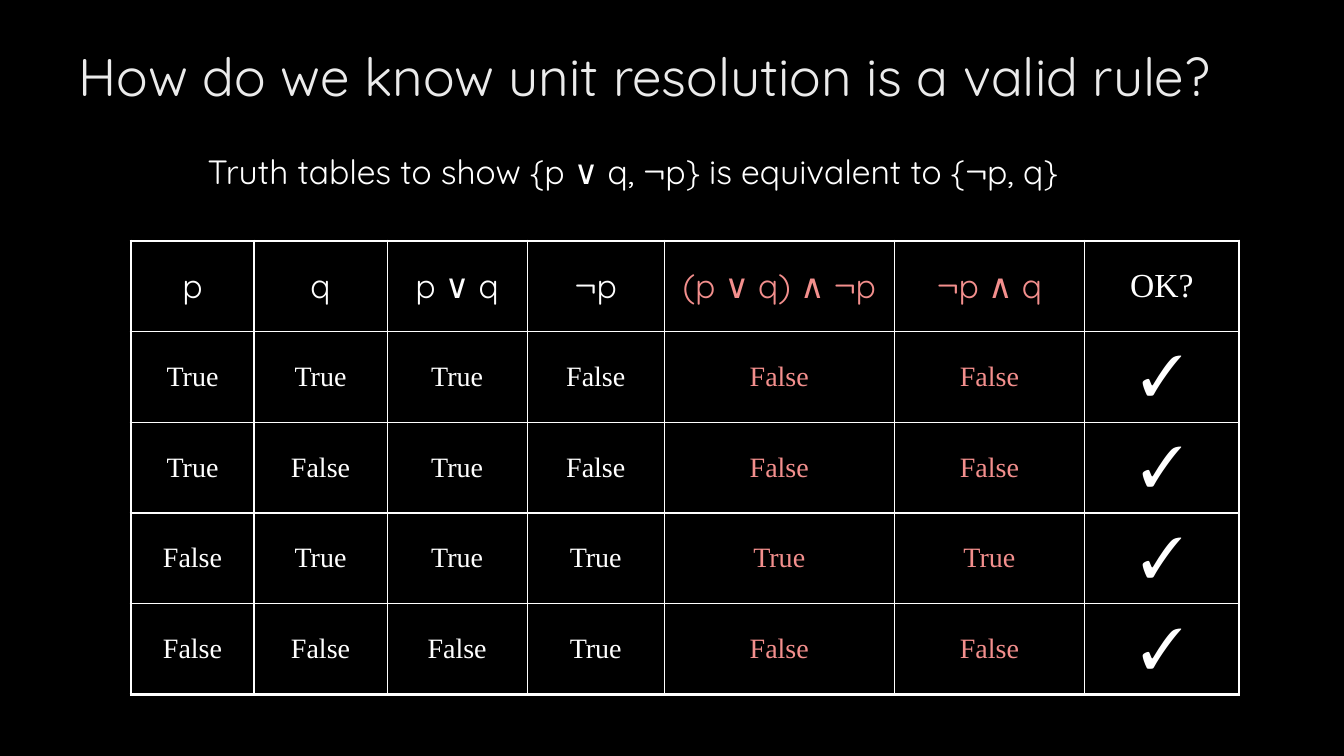
import pptx
import pptx.dml.color
import pptx.enum.text
import pptx.oxml
import pptx.oxml.ns
import pptx.util

Inches = pptx.util.Inches
Pt = pptx.util.Pt
RGBColor = pptx.dml.color.RGBColor
PP_ALIGN = pptx.enum.text.PP_ALIGN
MSO_ANCHOR = pptx.enum.text.MSO_ANCHOR

TITLE = "How do we know unit resolution is a valid rule?"
SUBTITLE = "Truth tables to show {p ∨ q, ¬p} is equivalent to {¬p, q}"
ROWS = [
    ["p", "q", "p ∨ q", "¬p", "(p ∨ q) ∧ ¬p", "¬p ∧ q", "OK?"],
    ["True", "True", "True", "False", "False", "False", "✓"],
    ["True", "False", "True", "False", "False", "False", "✓"],
    ["False", "True", "True", "True", "True", "True", "✓"],
    ["False", "False", "False", "True", "False", "False", "✓"],
]
COLUMN_WIDTHS = [1.22, 1.32, 1.39, 1.36, 2.28, 1.89, 1.53]
ROW_HEIGHT = 0.9
COMPARED_COLUMNS = (4, 5)

BLACK = RGBColor(0x00, 0x00, 0x00)
WHITE = RGBColor(0xFF, 0xFF, 0xFF)
LIGHT_GREY = RGBColor(0xEB, 0xEB, 0xEB)
SALMON = RGBColor(0xF3, 0x8F, 0x8D)
HEADING_FONT = "Quicksand"
VALUE_FONT = "Times New Roman"
OUTER_BORDER = 2.25
INNER_BORDER = 1


def add_run(paragraph, text, size, font_name, color):
    run = paragraph.add_run()
    run.text = text
    run.font.size = Pt(size)
    run.font.name = font_name
    run.font.color.rgb = color


def set_borders(cell, widths):
    """Draw white cell borders; widths are points for left, right, top, bottom."""
    properties = cell._tc.get_or_add_tcPr()
    for position, (side, width) in enumerate(zip("LRTB", widths)):
        line = pptx.oxml.parse_xml(
            f'<a:ln{side} {pptx.oxml.ns.nsdecls("a")} w="{Pt(width)}">'
            f'<a:solidFill><a:srgbClr val="{WHITE}"/></a:solidFill></a:ln{side}>'
        )
        properties.insert(position, line)


def cell_style(row, column):
    """Return the size, font and colour of a cell's text."""
    last_column = len(COLUMN_WIDTHS) - 1
    color = SALMON if column in COMPARED_COLUMNS else WHITE
    if row == 0:
        return 24, VALUE_FONT if column == last_column else HEADING_FONT, color
    return 40 if column == last_column else 20, VALUE_FONT, color


def border_widths(row, column):
    on_edge = (column == 0, column == len(COLUMN_WIDTHS) - 1,
               row == 0, row == len(ROWS) - 1)
    return [OUTER_BORDER if edge else INNER_BORDER for edge in on_edge]


def add_truth_table(slide):
    frame = slide.shapes.add_table(
        len(ROWS), len(COLUMN_WIDTHS), Inches(1.3), Inches(2.39),
        Inches(sum(COLUMN_WIDTHS)), Inches(ROW_HEIGHT * len(ROWS)))
    table = frame.table
    table.horz_banding = False
    for column, width in zip(table.columns, COLUMN_WIDTHS):
        column.width = Inches(width)
    for row_index, values in enumerate(ROWS):
        table.rows[row_index].height = Inches(ROW_HEIGHT)
        for column_index, value in enumerate(values):
            cell = table.cell(row_index, column_index)
            cell.fill.background()
            cell.vertical_anchor = MSO_ANCHOR.MIDDLE
            set_borders(cell, border_widths(row_index, column_index))
            paragraph = cell.text_frame.paragraphs[0]
            paragraph.alignment = PP_ALIGN.CENTER
            add_run(paragraph, value, *cell_style(row_index, column_index))


def main():
    presentation = pptx.Presentation()
    presentation.slide_width = Inches(13.33)
    presentation.slide_height = Inches(7.5)
    slide = presentation.slides.add_slide(presentation.slide_layouts[5])
    slide.background.fill.solid()
    slide.background.fill.fore_color.rgb = BLACK

    title = slide.shapes.title
    title.left, title.top = Inches(0.68), Inches(0.38)
    title.width, title.height = Inches(12.24), Inches(0.91)
    title.text_frame.vertical_anchor = MSO_ANCHOR.TOP
    paragraph = title.text_frame.paragraphs[0]
    paragraph.alignment = PP_ALIGN.LEFT
    add_run(paragraph, TITLE, 37.8, HEADING_FONT, LIGHT_GREY)

    add_truth_table(slide)

    subtitle = slide.shapes.add_textbox(
        Inches(1.96), Inches(1.45), Inches(9.01), Inches(0.5))
    subtitle.text_frame.word_wrap = True
    add_run(subtitle.text_frame.paragraphs[0], SUBTITLE, 24, HEADING_FONT, WHITE)

    presentation.save("out.pptx")


if __name__ == "__main__":
    main()
